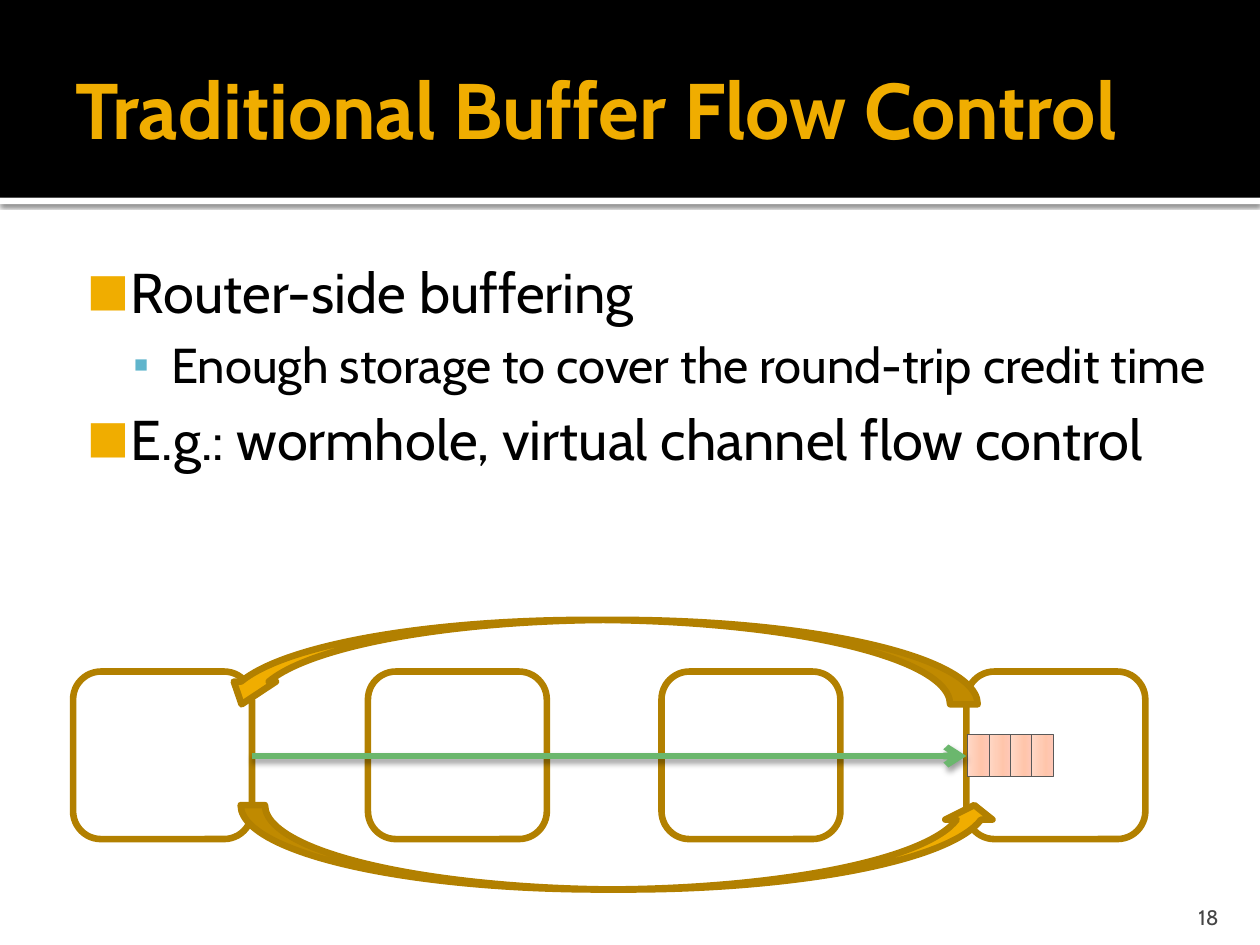
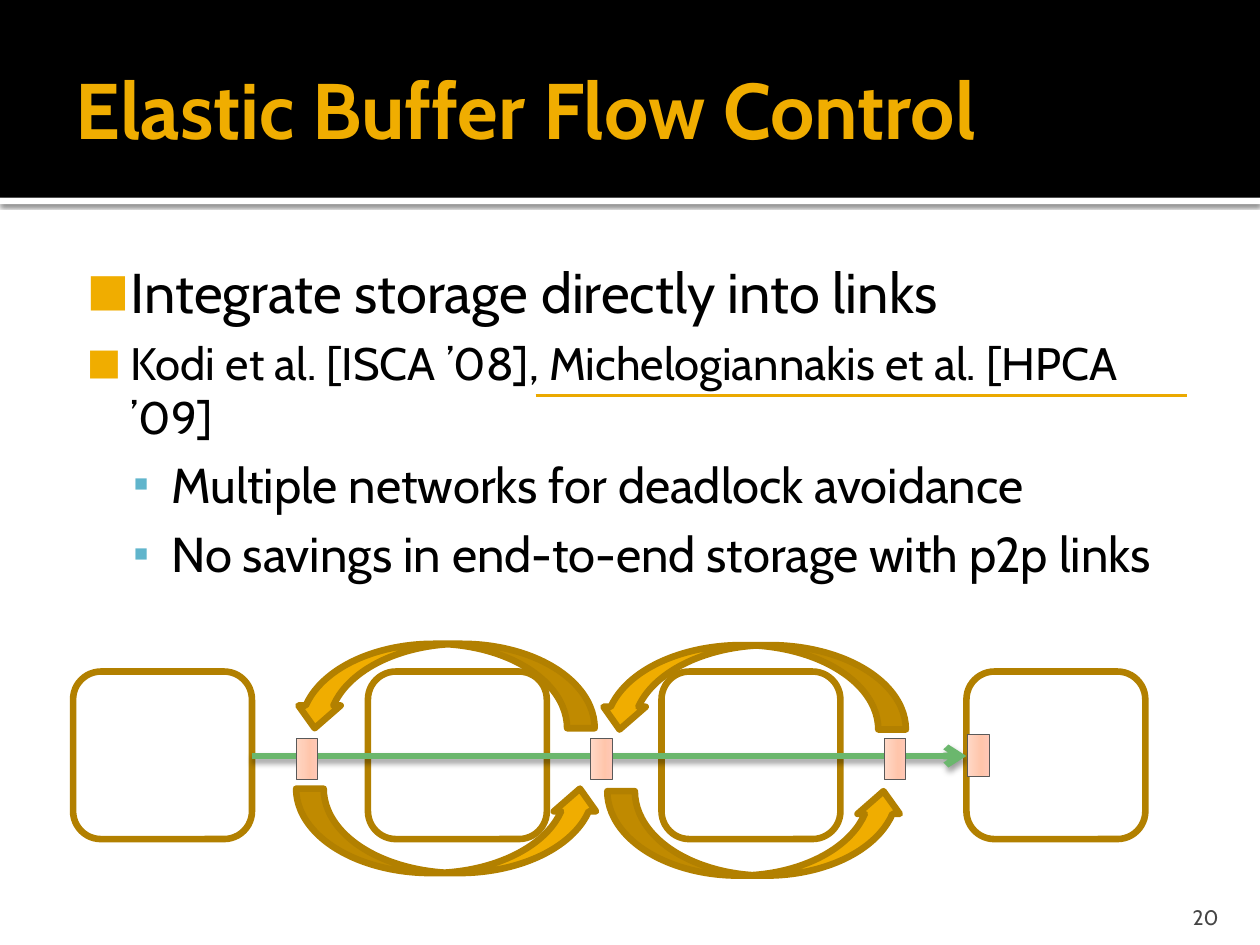
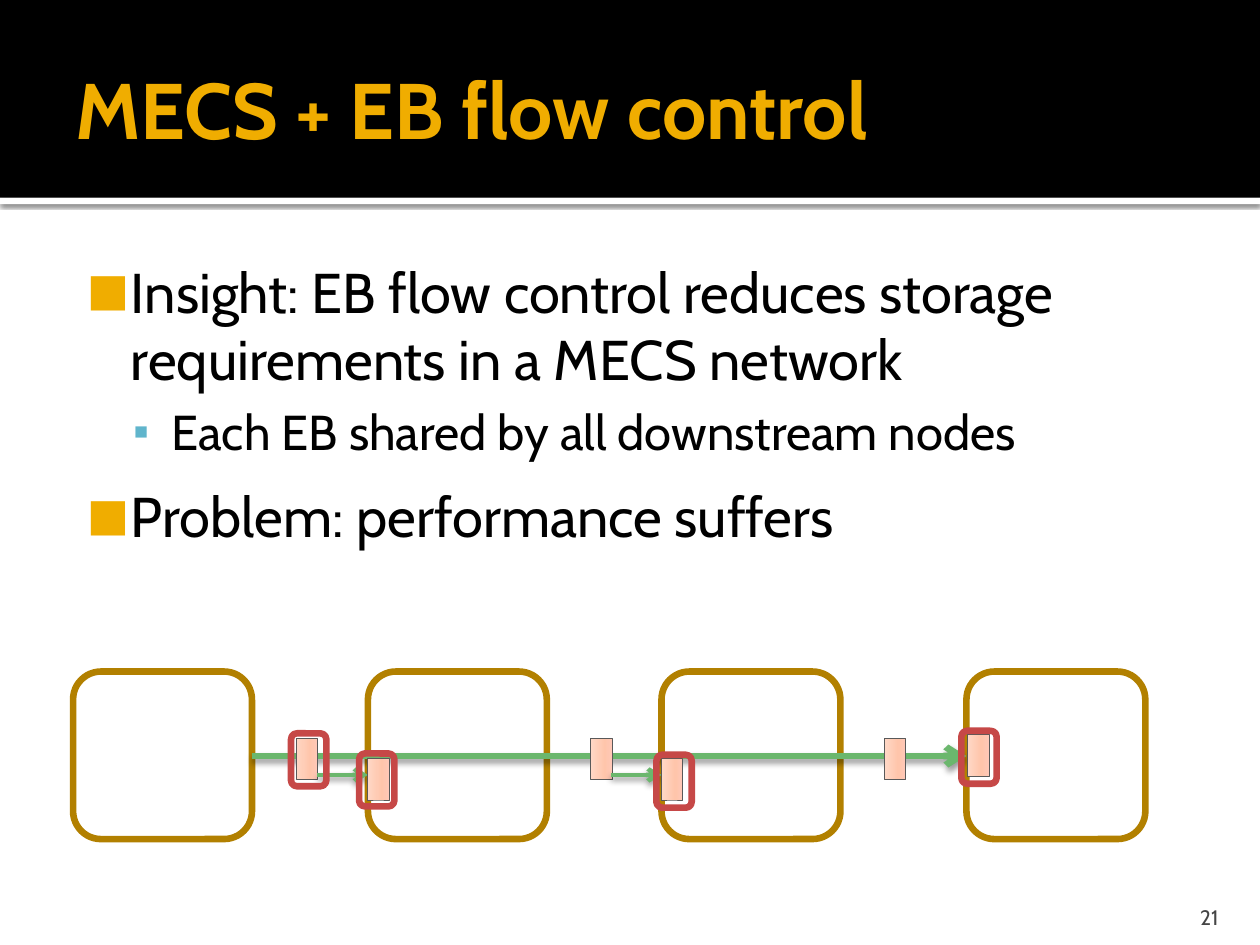
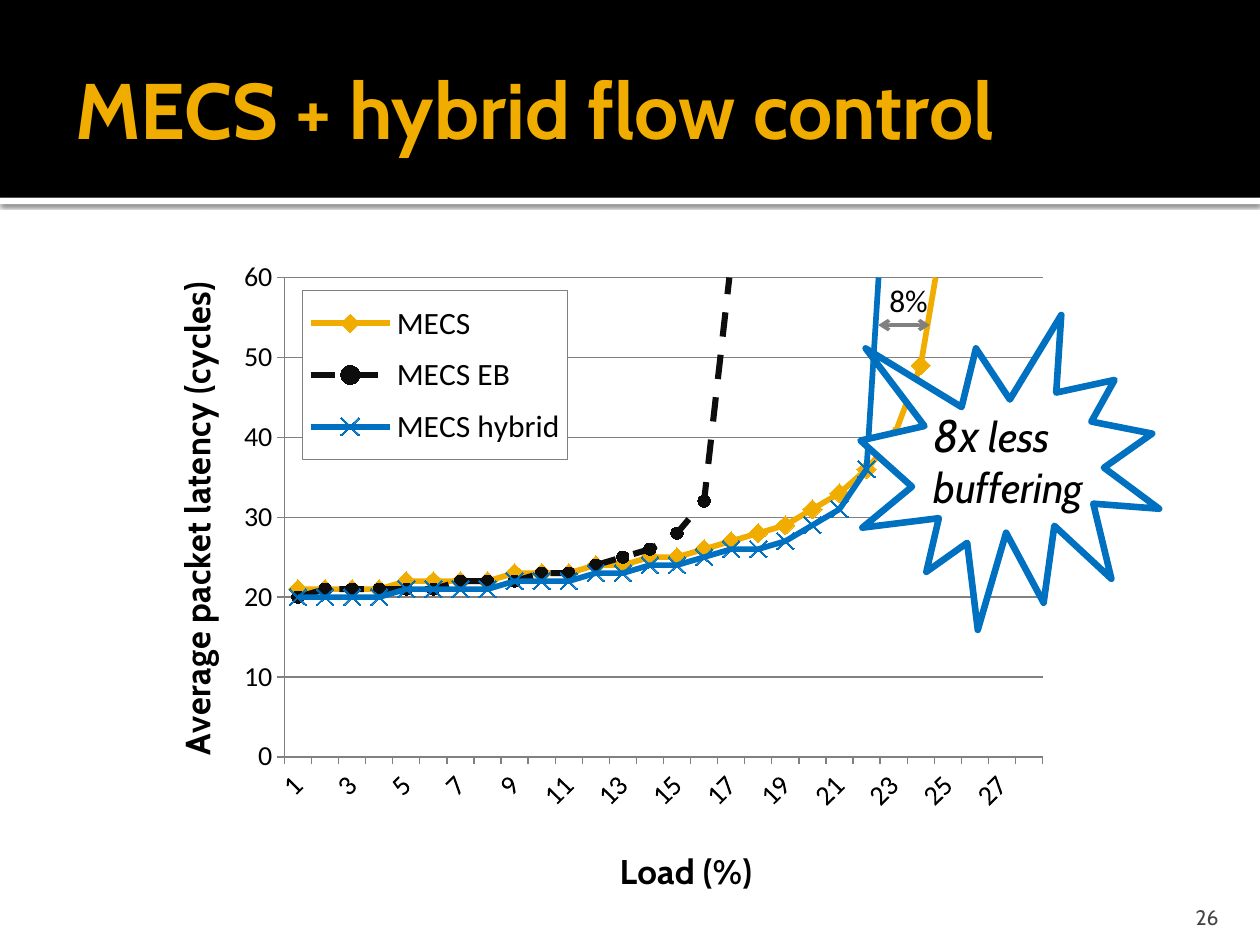
import dataclasses

import lxml.etree
import pptx
import pptx.chart.data
import pptx.dml.color
import pptx.enum.chart
import pptx.enum.dml
import pptx.enum.shapes
import pptx.enum.text
import pptx.oxml.ns
import pptx.util

Inches = pptx.util.Inches
Pt = pptx.util.Pt
qn = pptx.oxml.ns.qn
Shape = pptx.enum.shapes.MSO_SHAPE
Anchor = pptx.enum.text.MSO_ANCHOR
Align = pptx.enum.text.PP_ALIGN
Mark = pptx.enum.chart.XL_MARKER_STYLE
Dash = pptx.enum.dml.MSO_LINE


@dataclasses.dataclass(frozen=True)
class Theme:
    """Colours, fonts and type sizes of the deck."""
    black: str = "000000"
    white: str = "FFFFFF"
    gold: str = "F0AD00"
    brown: str = "B28000"
    rule: str = "EBA900"
    sky: str = "60B5CC"
    green: str = "6BB76D"
    red: str = "C64847"
    blue: str = "0070C0"
    ink: str = "0D0D0D"
    gray: str = "808080"
    edge: str = "595959"
    foot: str = "454545"
    cell: tuple = ((0, "FFC8B7"), (35, "FFC5AB"), (100, "FFD7C5"))
    font: str = "Cabin"
    plain: str = "Calibri"
    title: int = 45
    big: int = 32
    sub: int = 28
    cite: int = 26
    burst: int = 24
    axis: int = 20
    key: int = 18
    tick: int = 16
    small: int = 12
    thick: float = 3.78


def color(code):
    """Turn a hex code into a colour."""
    return pptx.dml.color.RGBColor.from_string(code)


def put(target, **values):
    """Set each named value on the target."""
    for name, value in values.items():
        setattr(target, name, value)


def add(parent, tag, **values):
    """Append an XML child with the given attributes."""
    return lxml.etree.SubElement(parent, qn(tag), {k: str(v) for k, v in values.items()})


class Deck:
    """Holds the style and the current slide."""

    def __init__(self, theme):
        """Start an empty deck."""
        self.theme = theme
        self.show = pptx.Presentation()
        self.slide = None
        put(self.show, slide_width=Inches(10), slide_height=Inches(7.5))

    def bands(self):
        """Put the title bands on the master."""
        t = self.theme
        strip = self.shape(Shape.RECTANGLE, (0, 1.57, 10, 0.05), fill=t.white)
        self.shade(strip, 60, 2.5, 0.8)
        band = self.shape(Shape.RECTANGLE, (0, 0, 10, 1.57), fill=t.black)
        for part in (strip, band):
            self.show.slide_master.shapes._spTree.append(part.element)

    def page(self, title, number):
        """Add a slide with its title and number."""
        t = self.theme
        first = self.slide is None
        self.slide = self.show.slides.add_slide(self.show.slide_layouts[6])
        if first:
            self.bands()
        head = self.text((0.5, 0.17, 9, 1.37), (0.1, 0.05, 0.05, 0.05), Anchor.MIDDLE)
        self.run(head.paragraphs[0], title, t.title, t.gold, bold=True)
        foot = self.text((8.97, 7.08, 0.8, 0.3), (0.1, 0.05, 0.1, 0), Anchor.BOTTOM)
        foot.paragraphs[0].alignment = Align.RIGHT
        self.run(foot.paragraphs[0], str(number), t.small, t.foot)

    def font(self, font, size, code, name=None, **more):
        """Style a font."""
        put(font, size=Pt(size), name=name or self.theme.font, **more)
        font.color.rgb = color(code)

    def run(self, para, words, size, code, name=None, **more):
        """Add a styled run."""
        run = para.add_run()
        run.text = words
        self.font(run.font, size, code, name, **more)

    def text(self, at, pads=(0.1, 0.05, 0.1, 0.05), anchor=Anchor.TOP):
        """Add a text box and return its frame."""
        frame = self.slide.shapes.add_textbox(*map(Inches, at)).text_frame
        sides = ("margin_left", "margin_top", "margin_right", "margin_bottom")
        put(frame, word_wrap=True, vertical_anchor=anchor,
            **dict(zip(sides, map(Inches, pads))))
        return frame

    def body(self, rows, width=9.17):
        """Add bullets from rows of level, words, size and gap."""
        t = self.theme
        looks = ((0.48, -0.35, t.gold, 80, "■"), (0.8, -0.3, t.sky, 90, "▪"))
        frame = self.text((0.5, 1.94, width, 5.06), (0.06, 0.1, 0.1, 0.05))
        for i, (level, words, size, gap) in enumerate(rows):
            para = frame.add_paragraph() if i else frame.paragraphs[0]
            left, hang, code, scale, sign = looks[level]
            put(para, level=level, space_before=Pt(gap))
            props = para._p.get_or_add_pPr()
            props.set("marL", str(Inches(left)))
            props.set("indent", str(Inches(hang)))
            add(add(props, "a:buClr"), "a:srgbClr", val=code)
            add(props, "a:buSzPct", val=scale * 1000)
            add(props, "a:buFont", typeface=t.plain)
            add(props, "a:buChar", char=sign)
            self.run(para, words, size, t.black)

    def shape(self, kind, at, fill=None, line=None, width=None, flip=None, bends=()):
        """Add a preset shape."""
        shape = self.slide.shapes.add_shape(kind, *map(Inches, at))
        shape.shadow.inherit = False
        if fill:
            shape.fill.solid()
            shape.fill.fore_color.rgb = color(fill)
        else:
            shape.fill.background()
        if line:
            shape.line.color.rgb = color(line)
            shape.line.width = Pt(width or self.theme.thick)
        else:
            shape.line.fill.background()
        if flip:
            shape.element.spPr.find(qn("a:xfrm")).set(flip, "1")
        for i, bend in enumerate(bends):
            shape.adjustments[i] = bend
        return shape

    def shade(self, shape, alpha, blur, far):
        """Drop a black shadow straight down."""
        effect = shape.element.spPr.find(qn("a:effectLst"))
        drop = add(effect, "a:outerShdw", blurRad=Pt(blur), dist=Pt(far),
                   dir=5400000, rotWithShape=0)
        add(add(drop, "a:srgbClr", val=self.theme.black), "a:alpha", val=alpha * 1000)

    def line(self, start, end, code, width, ends=()):
        """Add a line with arrows at the named ends."""
        line = self.slide.shapes.add_connector(
            pptx.enum.shapes.MSO_CONNECTOR.STRAIGHT, *map(Inches, start + end))
        line.line.color.rgb = color(code)
        line.line.width = Pt(width)
        for side in ends:
            add(line.line._get_or_add_ln(), "a:" + side, type="arrow")
        add(line.element.spPr, "a:effectLst")
        return line

    def flow(self, start, end, width=None):
        """Add a green link with a shadow."""
        link = self.line(start, end, self.theme.green, width or self.theme.thick, ["tailEnd"])
        self.shade(link, 38, 3.5, 2)

    def nodes(self):
        """Add the four routers."""
        for left in (0.58, 2.92, 5.25, 7.67):
            self.shape(Shape.ROUNDED_RECTANGLE, (left, 5.33, 1.42, 1.33), line=self.theme.brown)

    def cell(self, left, top):
        """Add one buffer slot."""
        t = self.theme
        slot = self.shape(Shape.RECTANGLE, (left, top, 0.17, 0.33), line=t.edge, width=0.5)
        slot.fill.gradient()
        slot.fill.gradient_angle = 180
        stops = slot.element.spPr.find(".//" + qn("a:gsLst"))
        stops[:] = []
        for pos, code in t.cell:
            add(add(stops, "a:gs", pos=pos * 1000), "a:srgbClr", val=code)

    def slots(self):
        """Add the slots on the links and at the last router."""
        self.flow((2, 6), (7.67, 6))
        self.cell(7.68, 5.83)
        for left in (7.02, 4.69, 2.35):
            self.cell(left, 5.86)

    def arc(self, at, flip, bends=(0.327, 0.5, 0.269)):
        """Add a curved credit arrow."""
        t = self.theme
        self.shape(Shape.CURVED_DOWN_ARROW, at, t.gold, t.brown, flip=flip, bends=bends)

    def chart(self, at, names, rows):
        """Add the line chart with its axes and key."""
        t = self.theme
        data = pptx.chart.data.CategoryChartData(number_format="0")
        data.categories = names
        for row in rows:
            data.add_series(row[0], row[-1])
        kind = pptx.enum.chart.XL_CHART_TYPE.LINE_MARKERS
        chart = self.slide.shapes.add_chart(kind, *map(Inches, at), data).chart
        self.font(chart.font, 10, t.black)
        put(chart, has_title=False, has_legend=True)
        chart.plots[0].vary_by_categories = False
        for item, row in zip(chart.plots[0].series, rows):
            self.curve(item, *row[1:-1])
        self.axis(chart.category_axis, "Load (%)", (0.51, 0.92))
        self.axis(chart.value_axis, "Average packet latency (cycles)", (0.02, 0.05))
        chart.category_axis._element.find(qn("c:txPr")).find(qn("a:bodyPr")).set("rot", "-2700000")
        put(chart.value_axis, minimum_scale=0, maximum_scale=60, major_unit=10,
            has_major_gridlines=True)
        put(chart.value_axis.tick_labels, number_format="0", number_format_is_linked=False)
        grid = chart.value_axis.major_gridlines.format.line
        grid.color.rgb = color(t.gray)
        grid.width = Pt(0.75)
        area = chart._chartSpace.chart.plotArea
        for old in area.findall(qn("c:layout")):
            area.remove(old)
        area.insert(0, self.place((0.15, 0.04, 0.83, 0.75), True))
        self.key(chart.legend)

    def curve(self, item, code, width, style, size, dash):
        """Style one series and its markers."""
        item.smooth = False
        put(item.format.line, width=Pt(width), dash_style=dash)
        item.format.line.color.rgb = color(code)
        put(item.marker, style=style, size=size)
        look = item.marker.format
        if style == Mark.X:
            look.fill.background()
        else:
            look.fill.solid()
            look.fill.fore_color.rgb = color(code)
        if style == Mark.CIRCLE:
            look.line.fill.background()
        else:
            look.line.color.rgb = color(code)

    def axis(self, axis, words, spot):
        """Style an axis and give it a title at a spot."""
        t = self.theme
        axis.major_tick_mark = pptx.enum.chart.XL_TICK_MARK.OUTSIDE
        axis.format.line.color.rgb = color(t.gray)
        self.font(axis.tick_labels.font, t.tick, t.black, t.plain)
        para = axis.axis_title.text_frame.paragraphs[0]
        self.run(para, words, t.axis, t.black, bold=True)
        root = axis.axis_title._element
        for old in root.findall(qn("c:layout")):
            root.remove(old)
        root.find(qn("c:tx")).addnext(self.place(spot))

    def key(self, key):
        """Place and frame the chart key."""
        t = self.theme
        put(key, position=pptx.enum.chart.XL_LEGEND_POSITION.RIGHT, include_in_layout=True)
        self.font(key.font, t.key, t.black, t.plain)
        root = key._element
        for old in root.findall(qn("c:layout")):
            root.remove(old)
        root.find(qn("c:legendPos")).addnext(self.place((0.17, 0.06, 0.29, 0.265)))
        props = lxml.etree.Element(qn("c:spPr"))
        add(add(props, "a:solidFill"), "a:srgbClr", val=t.white)
        edge = add(props, "a:ln", w=Pt(0.75))
        add(add(edge, "a:solidFill"), "a:srgbClr", val=t.gray)
        root.find(qn("c:overlay")).addnext(props)

    def place(self, at, inner=False):
        """Make a manual chart layout."""
        root = lxml.etree.Element(qn("c:layout"))
        spot = add(root, "c:manualLayout")
        if inner:
            add(spot, "c:layoutTarget", val="inner")
        for side in "xy":
            add(spot, f"c:{side}Mode", val="edge")
        for side, value in zip("xywh", at):
            add(spot, "c:" + side, val=value)
        return root


def main():
    """Build the four slides."""
    t = Theme()
    deck = Deck(t)

    deck.page("Traditional Buffer Flow Control", 18)
    deck.body([(0, "Router-side buffering", t.big, 0),
               (1, "Enough storage to cover the round-trip credit time", t.sub, 6),
               (0, "E.g.: wormhole, virtual channel flow control", t.big, 6)])
    deck.nodes()
    for i in range(4):
        deck.cell(7.68 + i * 0.17, 5.83)
    deck.flow((2, 6), (7.67, 6))
    deck.arc((1.91, 6.39, 6.01, 0.67), "flipV", (0.288, 0.559, 0.172))
    deck.arc((1.75, 4.92, 6.01, 0.67), "flipH")

    deck.page("Elastic Buffer Flow Control", 20)
    deck.body([(0, "Integrate storage directly into links", t.big, 0),
               (0, "Kodi et al. [ISCA ’08], Michelogiannakis et al. [HPCA ’09]", t.cite, 6),
               (1, "Multiple networks for deadlock avoidance", t.sub, 6),
               (1, "No savings in end-to-end storage with p2p links", t.sub, 6)])
    deck.nodes()
    deck.slots()
    for left, top, width, flip in ((4.75, 5.12, 2.44, "flipH"), (2.33, 5.11, 2.39, "flipH"),
                                   (4.82, 6.28, 2.36, "flipV"), (2.35, 6.26, 2.42, "flipV")):
        deck.arc((left, top, width, 0.67), flip)
    deck.line((4.25, 3.14), (9.42, 3.14), t.rule, 2)

    deck.page("MECS + EB flow control", 21)
    deck.body([(0, "Insight: EB flow control reduces storage requirements in a MECS network",
                t.big, 6),
               (1, "Each EB shared by all downstream nodes", t.sub, 6),
               (0, "Problem: performance suffers", t.big, 12)], 9)
    deck.nodes()
    deck.slots()
    for left in (2.92, 5.25):
        deck.flow((left - 0.4, 6.15), (left, 6.15), 2.5)
        deck.cell(left, 6.02)
    for left, top in ((2.31, 5.82), (2.85, 5.98), (5.21, 5.99), (7.63, 5.8)):
        deck.shape(Shape.ROUNDED_RECTANGLE, (left, top, 0.28, 0.42), line=t.red)

    deck.page("MECS + hybrid flow control", 26)
    deck.chart((1.17, 2, 7.25, 5.17), [str(n) for n in range(1, 29)], [
        ("MECS", t.gold, 3.25, Mark.DIAMOND, 11, Dash.SOLID,
         (21, 21, 21, 21, 22, 22, 22, 22, 23, 23, 23, 24, 24, 25,
          25, 26, 27, 28, 29, 31, 33, 36, 40, 49, 69, 176, 451, 853)),
        ("MECS EB", t.ink, 3.5, Mark.CIRCLE, 7, Dash.DASH,
         (20, 21, 21, 21, 21, 21, 22, 22, 22, 23, 23, 24, 25, 26, 28, 32, 62, 196,
          429, 797, 1309, 1865, 2423, 3011, 3621, 4213, 4795, 5389)),
        ("MECS hybrid", t.blue, 3.25, Mark.X, 10, Dash.SOLID,
         (20, 20, 20, 20, 21, 21, 21, 21, 22, 22, 22, 23, 23, 24,
          24, 25, 26, 26, 27, 29, 31, 36, 90, 305, 665, 1118, 1711, 2148))])
    deck.line((6.97, 2.58), (7.38, 2.58), t.gray, 2, ["headEnd", "tailEnd"])
    gap = deck.text((6.96, 2.18, 0.53, 0.4))
    deck.run(gap.paragraphs[0], "8%", t.key, t.black, t.plain)
    deck.shape(Shape.EXPLOSION1, (6.83, 2.5, 2.37, 2.5), t.white, t.blue)
    burst = deck.text((7.31, 3.18, 1.5, 0.94)).paragraphs[0]
    deck.run(burst, "8x", t.cite, t.black, italic=True)
    deck.run(burst, " less buffering", t.burst, t.black, italic=True)

    deck.show.save("out.pptx")


if __name__ == "__main__":
    main()
